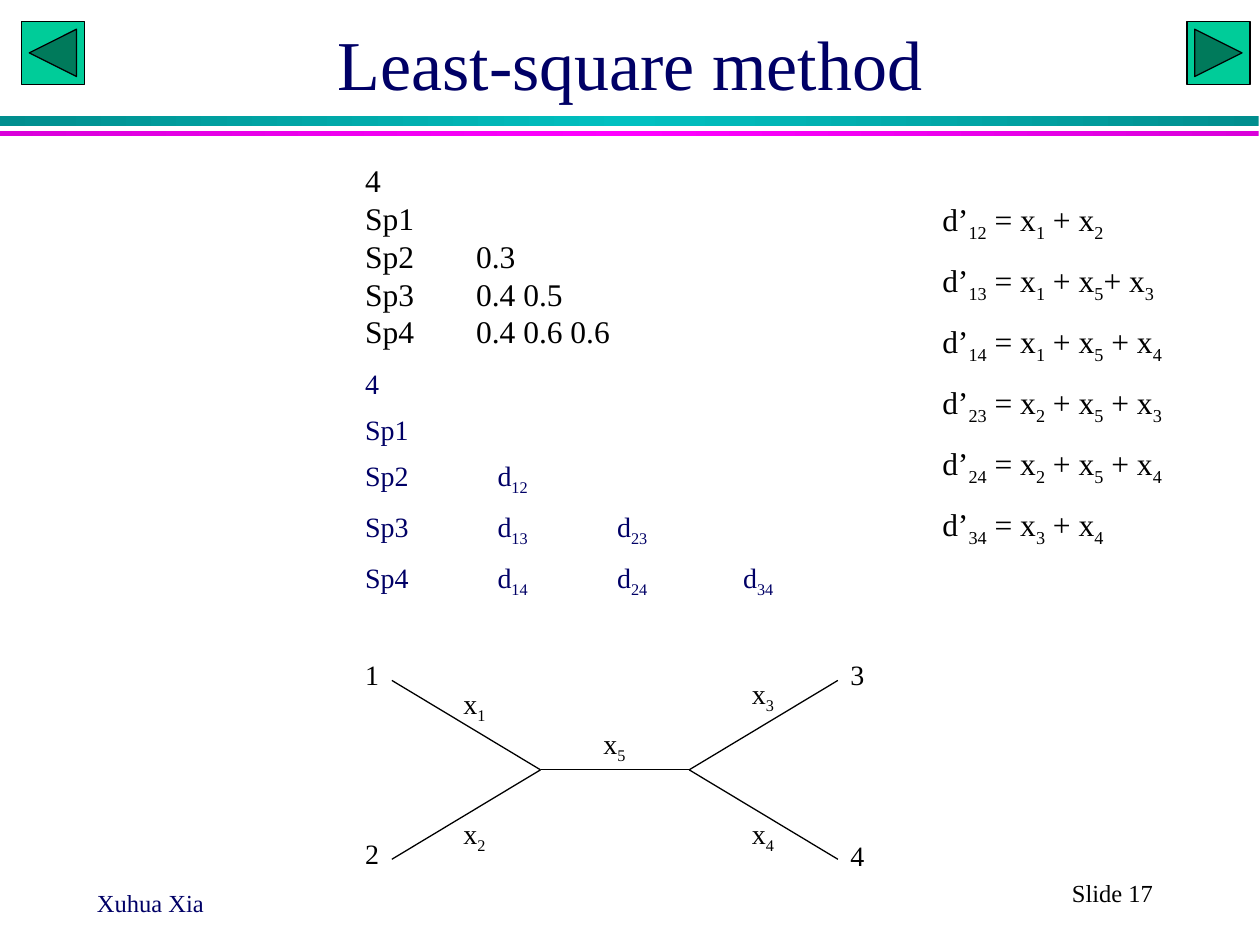
import copy
import dataclasses
import typing

import lxml.etree
import pptx
import pptx.dml.color
import pptx.enum.shapes
import pptx.enum.text
import pptx.oxml.ns
import pptx.util

Inches = pptx.util.Inches
Pt = pptx.util.Pt
qn = pptx.oxml.ns.qn
SHAPE = pptx.enum.shapes.MSO_SHAPE
ALIGN = pptx.enum.text.PP_ALIGN
FONT = "Times New Roman"
COLORS = {
    "ink": "000000",
    "navy": "000066",
    "green": "00CC99",
    "teal": "008E8E",
    "aqua": "00C0C0",
    "plum": "DA00DA",
    "pink": "FF00FF",
}


@dataclasses.dataclass
class Box:
    left: float
    top: float
    width: float
    height: float

    def lengths(self) -> list:
        return [Inches(n) for n in dataclasses.astuple(self)]


@dataclasses.dataclass
class Bar:
    box: Box
    edge: str
    mid: str


@dataclasses.dataclass
class Button:
    left: float
    kind: typing.Any


@dataclasses.dataclass
class Label:
    text: str
    left: float
    top: float


@dataclasses.dataclass
class Branch:
    start: tuple
    end: tuple


BARS = [
    Bar(Box(0, 0.92, 9.99, 0.08), "teal", "aqua"),
    Bar(Box(0, 1.04, 9.99, 0.04), "plum", "pink"),
]
BUTTONS = [
    Button(0.17, SHAPE.ACTION_BUTTON_BACK_OR_PREVIOUS),
    Button(9.42, SHAPE.ACTION_BUTTON_FORWARD_OR_NEXT),
]
LEFT_NODE, RIGHT_NODE = (4.29, 6.11), (5.47, 6.11)
BRANCHES = [
    Branch((3.11, 5.4), LEFT_NODE),
    Branch((3.11, 6.82), LEFT_NODE),
    Branch((6.65, 5.4), RIGHT_NODE),
    Branch((6.65, 6.82), RIGHT_NODE),
    Branch(LEFT_NODE, RIGHT_NODE),
]
LABELS = [
    Label("1", 2.8, 5.17),
    Label("2", 2.8, 6.59),
    Label("3", 6.65, 5.17),
    Label("4", 6.65, 6.61),
    Label("x|1", 3.58, 5.4),
    Label("x|2", 3.58, 6.43),
    Label("x|3", 5.87, 5.32),
    Label("x|4", 5.87, 6.43),
    Label("x|5", 4.69, 5.72),
]
VALUES = ["4", "Sp1", "Sp2\t0.3", "Sp3\t0.4 0.5", "Sp4\t0.4 0.6 0.6"]
SYMBOLS = [
    "4",
    "Sp1",
    "Sp2\td|12",
    "Sp3\td|13|\td|23",
    "Sp4\td|14|\td|24|\td|34",
]
SUMS = [
    "d’|12| = x|1| + x|2",
    "d’|13| = x|1| + x|5|+ x|3",
    "d’|14| = x|1| + x|5| + x|4",
    "d’|23| = x|2| + x|5| + x|3",
    "d’|24| = x|2| + x|5| + x|4",
    "d’|34| = x|3| + x|4",
]


def color(name: str) -> pptx.dml.color.RGBColor:
    return pptx.dml.color.RGBColor.from_string(COLORS[name])


def write(frame, lines: list, size: float = 16, ink: str = "ink",
          align=ALIGN.LEFT, gap: float = 0, tabs: tuple = ()) -> None:
    frame.word_wrap = True
    for row, line in enumerate(lines):
        para = frame.add_paragraph() if row else frame.paragraphs[0]
        para.alignment = align
        para.space_before = Pt(gap if row else 0)
        if tabs:
            stops = lxml.etree.SubElement(para._p.get_or_add_pPr(), qn("a:tabLst"))
            for stop in tabs:
                lxml.etree.SubElement(stops, qn("a:tab"), pos=str(Inches(stop)), algn="l")
        for part, text in enumerate(line.split("|")):
            run = para.add_run()
            run.text = text
            run.font.name = FONT
            run.font.size = Pt(size)
            run.font.color.rgb = color(ink)
            if part % 2:
                run.font._element.set("baseline", "-25000")


def add_text(slide, box: Box, lines: list, **style) -> None:
    write(slide.shapes.add_textbox(*box.lengths()).text_frame, lines, **style)


def add_bar(slide, bar: Bar) -> None:
    shape = slide.shapes.add_shape(SHAPE.RECTANGLE, *bar.box.lengths())
    shape.shadow.inherit = False
    shape.line.fill.background()
    shape.fill.gradient()
    shape.fill.gradient_angle = 0
    stops = shape._element.spPr.find(".//" + qn("a:gsLst"))
    stops.append(copy.deepcopy(stops[0]))
    for stop, place, name in zip(shape.fill.gradient_stops, (0, 0.5, 1),
                                 (bar.edge, bar.mid, bar.edge)):
        stop.position = place
        stop.color.rgb = color(name)


def add_button(slide, button: Button) -> None:
    box = Box(button.left, 0.17, 0.5, 0.5)
    shape = slide.shapes.add_shape(button.kind, *box.lengths())
    shape.shadow.inherit = False
    shape.fill.solid()
    shape.fill.fore_color.rgb = color("green")
    shape.line.color.rgb = color("ink")
    shape.line.width = Pt(0.75)


def add_branch(slide, branch: Branch) -> None:
    ends = [Inches(n) for n in branch.start + branch.end]
    line = slide.shapes.add_connector(pptx.enum.shapes.MSO_CONNECTOR.STRAIGHT, *ends)
    line.line.color.rgb = color("ink")
    line.line.width = Pt(0.75)
    lxml.etree.SubElement(line._element.spPr, qn("a:effectLst"))


def main() -> None:
    deck = pptx.Presentation()
    deck.slide_width, deck.slide_height = Inches(10), Inches(7.5)
    slide = deck.slides.add_slide(deck.slide_layouts[5])
    for bar in BARS:
        add_bar(slide, bar)
    for button in BUTTONS:
        add_button(slide, button)

    title = slide.shapes.title
    title.left, title.top, title.width, title.height = Box(0.75, 0, 8.5, 1).lengths()
    title.text_frame.vertical_anchor = pptx.enum.text.MSO_ANCHOR.MIDDLE
    write(title.text_frame, ["Least-square method"], size=40, ink="navy", align=ALIGN.CENTER)

    add_text(slide, Box(0.67, 7, 2.08, 0.25), ["Xuhua Xia"], size=14, ink="navy")
    add_text(slide, Box(7.83, 6.92, 2, 0.33), ["Slide 17"], size=14, align=ALIGN.CENTER)

    for branch in BRANCHES:
        add_branch(slide, branch)
    for label in LABELS:
        add_text(slide, Box(label.left, label.top, 0.47, 0.37), [label.text])

    add_text(slide, Box(2.8, 1.23, 2.28, 1.6), VALUES, size=18, tabs=(0.88,))
    add_text(slide, Box(2.8, 2.86, 3.52, 1.87), SYMBOLS, ink="navy", gap=7.2,
             tabs=(1.05, 2, 3))
    add_text(slide, Box(7.38, 1.54, 2.91, 2.66), SUMS, size=18, gap=10.3)
    deck.save("out.pptx")


if __name__ == "__main__":
    main()
